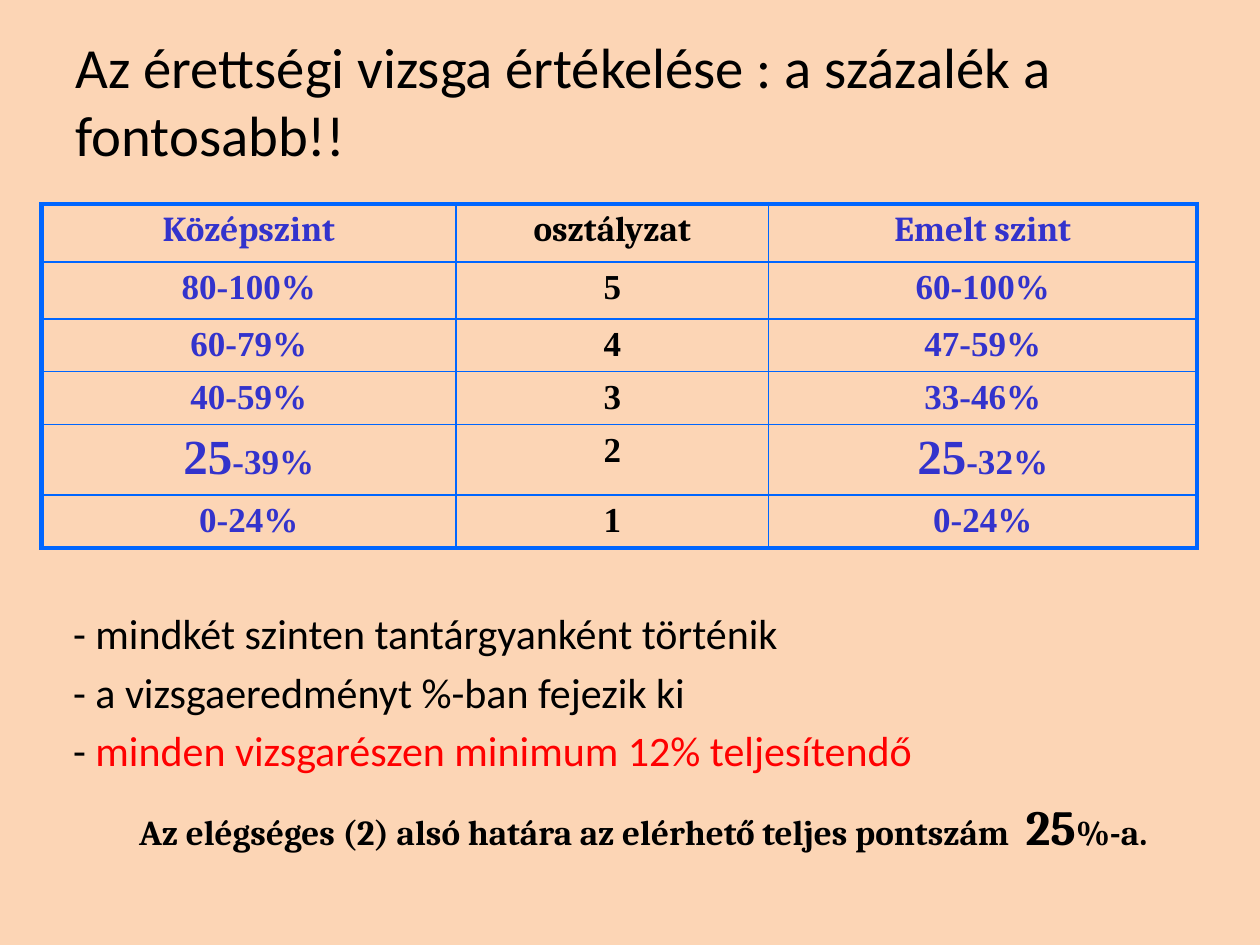
from lxml import etree
from pptx import Presentation
from pptx.dml.color import RGBColor
from pptx.enum.text import MSO_ANCHOR, MSO_AUTO_SIZE, PP_ALIGN
from pptx.oxml.ns import qn
from pptx.util import Inches, Pt

LEFT, CENTER = PP_ALIGN.LEFT, PP_ALIGN.CENTER
TOP, MIDDLE = MSO_ANCHOR.TOP, MSO_ANCHOR.MIDDLE
NO_FIT = MSO_AUTO_SIZE.NONE

COLORS = {
    "back": "FCD5B5",
    "text": "000000",
    "level": "3333CC",
    "rule": "0066FF",
    "alert": "FF0000",
}
SANS, SERIF, ROMAN = "Calibri", "Cambria", "Times New Roman"

COLS = [3.29, 2.48, 3.4]
ROWS = [0.46, 0.45, 0.42, 0.42, 0.56, 0.42]
GRADES = [
    ("Középszint", "osztályzat", "Emelt szint"),
    ("80-100%", "5", "60-100%"),
    ("60-79%", "4", "47-59%"),
    ("40-59%", "3", "33-46%"),
    ("25-39%", "2", "25-32%"),
    ("0-24%", "1", "0-24%"),
]
POINTS = [
    [("- mindkét szinten tantárgyanként történik", "text")],
    [("- a vizsgaeredményt %-ban fejezik ki", "text")],
    [("- ", "text"), ("minden vizsgarészen minimum 12% teljesítendő", "alert")],
]


def color(name):
    return RGBColor.from_string(COLORS[name])


def hang(para, size):
    """Give a paragraph a hanging indent, no bullet and 20% space before."""
    para.space_before = Pt(size * 0.2)
    props = para._p.get_or_add_pPr()
    props.set("marL", str(Inches(0.38)))
    props.set("indent", str(-Inches(0.38)))
    etree.SubElement(props, qn("a:buNone"))


def edge(cell, widths):
    """Draw the left, right, top and bottom cell borders, in points."""
    props = cell._tc.get_or_add_tcPr()
    for spot, (side, width) in enumerate(zip("LRTB", widths)):
        line = etree.Element(qn(f"a:ln{side}"), w=str(Pt(width)))
        fill = etree.SubElement(line, qn("a:solidFill"))
        etree.SubElement(fill, qn("a:srgbClr"), val=COLORS["rule"])
        props.insert(spot, line)


class Deck:
    def __init__(self):
        self.show = Presentation()
        self.show.slide_width = Inches(10)
        self.show.slide_height = Inches(7.5)
        self.slide = self.show.slides.add_slide(self.show.slide_layouts[1])
        fill = self.slide.background.fill
        fill.solid()
        fill.fore_color.rgb = color("back")

    def run(self, para, text, size, font, tint="text", bold=False):
        run = para.add_run()
        run.text = text
        run.font.size = Pt(size)
        run.font.name = font
        run.font.bold = bold
        run.font.color.rgb = color(tint)
        return run

    def place(self, shape, box, anchor=TOP):
        """Move a shape to its box and return its text frame."""
        shape.left, shape.top, shape.width, shape.height = map(Inches, box)
        frame = shape.text_frame
        frame.word_wrap = True
        frame.auto_size = NO_FIT
        frame.vertical_anchor = anchor
        return frame

    def title(self, text, box):
        para = self.place(self.slide.shapes.title, box, MIDDLE).paragraphs[0]
        para.alignment = LEFT
        run = self.run(para, text, 32.4, SANS)
        effects = etree.Element(qn("a:effectLst"))
        shadow = etree.SubElement(effects, qn("a:outerShdw"), blurRad="38100",
                                  dist="38100", dir="2700000", algn="tl")
        etree.SubElement(shadow, qn("a:srgbClr"), val="FFFFFF")
        run.font.fill._xPr.find(qn("a:solidFill")).addnext(effects)

    def table(self, data, left, top):
        shape = self.slide.shapes.add_table(
            len(ROWS), len(COLS), Inches(left), Inches(top),
            Inches(sum(COLS)), Inches(sum(ROWS)))
        table = shape.table
        table.first_row = table.horz_banding = False
        for col, width in zip(table.columns, COLS):
            col.width = Inches(width)
        for row, height in zip(table.rows, ROWS):
            row.height = Inches(height)
        for r, texts in enumerate(data):
            for c, text in enumerate(texts):
                self.cell(table.cell(r, c), r, c, text)

    def cell(self, cell, r, c, text):
        cell.margin_left = cell.margin_right = Inches(0.14)
        cell.fill.background()
        outer = (c == 0, c == len(COLS) - 1, r == 0, r == len(ROWS) - 1)
        edge(cell, [3 if out else 1 for out in outer])
        para = cell.text_frame.paragraphs[0]
        para.alignment = CENTER
        font = ROMAN if r else SERIF
        tint = "text" if c == 1 else "level"
        if text.startswith("25"):
            self.run(para, text[:2], 28, font, tint, True)
            text = text[2:]
        self.run(para, text, 20, font, tint, True)

    def points(self, items, box):
        frame = self.place(self.slide.placeholders[1], box)
        frame.margin_top = Inches(0.46)
        for i, runs in enumerate(items):
            para = frame.add_paragraph() if i else frame.paragraphs[0]
            hang(para, 24)
            for text, tint in runs:
                self.run(para, text, 24, SANS, tint)

    def note(self, runs, box):
        shape = self.slide.shapes.add_textbox(*map(Inches, box))
        para = self.place(shape, box).paragraphs[0]
        para.alignment = CENTER
        hang(para, 20)
        for text, size in runs:
            self.run(para, text, size, SERIF, bold=True)


def main():
    deck = Deck()
    deck.title("Az érettségi vizsga értékelése : a százalék a fontosabb!!",
               (0.5, 0.36, 9, 0.87))
    deck.table(GRADES, 0.33, 1.62)
    deck.points(POINTS, (0.48, 4.36, 7.45, 1.27))
    deck.note([("Az elégséges (2) alsó határa az elérhető teljes pontszám  ", 20),
               ("25", 28), ("%-a.", 20)], (0.49, 6.27, 9.23, 0.55))
    deck.show.save("out.pptx")


if __name__ == "__main__":
    main()
